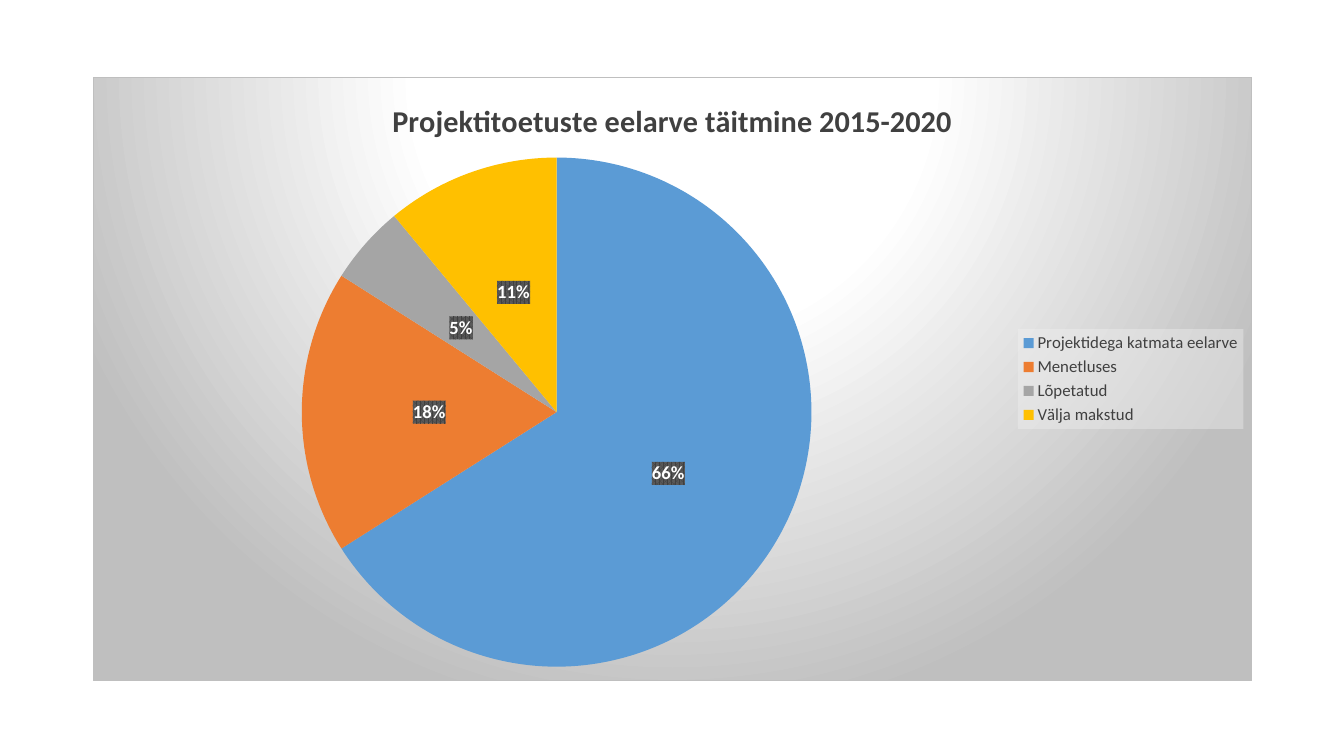
import pptx
import pptx.chart.data
import pptx.dml.color
import pptx.enum.chart
import pptx.oxml
import pptx.oxml.ns
import pptx.util
from dataclasses import dataclass
from pptx.util import Inches

NS = pptx.oxml.ns.nsdecls("c", "a")


@dataclass(frozen=True)
class Theme:
    font: str = "Calibri"
    dark: str = "404040"
    label_text: str = "FFFFFF"
    label_stripe: str = "595959"
    legend_fill: str = "F2F2F2"
    border: str = "BFBFBF"
    slices: tuple = ("5B9BD5", "ED7D31", "A5A5A5", "FFC000")
    title_size: float = 21.6
    label_size: float = 13.3
    legend_size: float = 12


THEME = Theme()
TITLE = "Projektitoetuste eelarve täitmine 2015-2020"
BUDGET = {
    "Projektidega katmata eelarve": 66,
    "Menetluses": 18,
    "Lõpetatud": 5,
    "Välja makstud": 11,
}


def rgb(color):
    return pptx.dml.color.RGBColor.from_string(color)


def set_font(font, size, color, bold=False):
    font.name = THEME.font
    font.size = pptx.util.Pt(size)
    font.bold = bold
    font.color.rgb = rgb(color)


def add_box_style(parent, fill, line="<a:ln><a:noFill/></a:ln>"):
    """Give a chart part a fill and outline; its txPr must already exist."""
    box = pptx.oxml.parse_xml(f"<c:spPr {NS}>{fill}{line}</c:spPr>")
    parent.find(pptx.oxml.ns.qn("c:txPr")).addprevious(box)


def solid(color, alpha=100):
    return (f'<a:solidFill><a:srgbClr val="{color}">'
            f'<a:alpha val="{alpha * 1000}"/></a:srgbClr></a:solidFill>')


def radial_gradient():
    stops = "".join(
        f'<a:gs pos="{pos * 1000}"><a:srgbClr val="{color}"/></a:gs>'
        for pos, color in ((0, "FFFFFF"), (39, "FFFFFF"), (100, THEME.border)))
    return (f'<a:gradFill><a:gsLst>{stops}</a:gsLst><a:path path="circle">'
            '<a:fillToRect l="50000" t="-80000" r="50000" b="180000"/>'
            '</a:path></a:gradFill>')


def place_plot(chart, x, y, w, h):
    """Set the plot's inner area as fractions of the chart."""
    plot_area = chart.plots[0]._element.getparent()
    for old in plot_area.findall(pptx.oxml.ns.qn("c:layout")):
        plot_area.remove(old)
    sizes = "".join(f'<c:{tag} val="{val}"/>'
                    for tag, val in (("x", x), ("y", y), ("w", w), ("h", h)))
    plot_area.insert(0, pptx.oxml.parse_xml(
        f'<c:layout {NS}><c:manualLayout><c:layoutTarget val="inner"/>'
        f'<c:xMode val="edge"/><c:yMode val="edge"/>{sizes}'
        '</c:manualLayout></c:layout>'))


def style_title(chart):
    chart.has_title = True
    tf = chart.chart_title.text_frame
    tf.text = TITLE
    set_font(tf.paragraphs[0].runs[0].font, THEME.title_size, THEME.dark, True)
    chart.chart_title.include_in_layout = False


def style_legend(chart):
    chart.has_legend = True
    legend = chart.legend
    legend.position = pptx.enum.chart.XL_LEGEND_POSITION.RIGHT
    legend.include_in_layout = False
    set_font(legend.font, THEME.legend_size, THEME.dark)
    add_box_style(legend._element, solid(THEME.legend_fill, 39))


def style_slices(plot):
    plot.vary_by_categories = True
    for i, color in enumerate(THEME.slices):
        fill = plot.series[0].points[i].format.fill
        fill.solid()
        fill.fore_color.rgb = rgb(color)


def style_labels(series):
    labels = series.data_labels
    labels.show_percentage = True
    labels.show_value = False
    labels.number_format = "0%"
    labels.number_format_is_linked = False
    labels.position = pptx.enum.chart.XL_LABEL_POSITION.CENTER
    set_font(labels.font, THEME.label_size, THEME.label_text, True)
    add_box_style(
        labels._element,
        f'<a:pattFill prst="pct75"><a:fgClr><a:srgbClr val="{THEME.dark}"/></a:fgClr>'
        f'<a:bgClr><a:srgbClr val="{THEME.label_stripe}"/></a:bgClr></a:pattFill>')


def add_budget_pie(s):
    data = pptx.chart.data.CategoryChartData()
    data.categories = list(BUDGET)
    data.add_series("Series 1", list(BUDGET.values()))
    chart = s.shapes.add_chart(
        pptx.enum.chart.XL_CHART_TYPE.PIE,
        Inches(0.92), Inches(0.76), Inches(11.5), Inches(6), data).chart
    set_font(chart.font, 10, "000000")
    add_box_style(chart._chartSpace, radial_gradient(),
                  f'<a:ln w="9525">{solid(THEME.border)}</a:ln>')
    style_title(chart)
    style_legend(chart)
    style_slices(chart.plots[0])
    style_labels(chart.plots[0].series[0])
    place_plot(chart, 0.18, 0.13, 0.44, 0.85)


def main():
    prs = pptx.Presentation()
    prs.slide_width, prs.slide_height = Inches(13.33), Inches(7.5)
    s = prs.slides.add_slide(prs.slide_layouts[6])
    add_budget_pie(s)
    prs.save("out.pptx")


if __name__ == "__main__":
    main()
